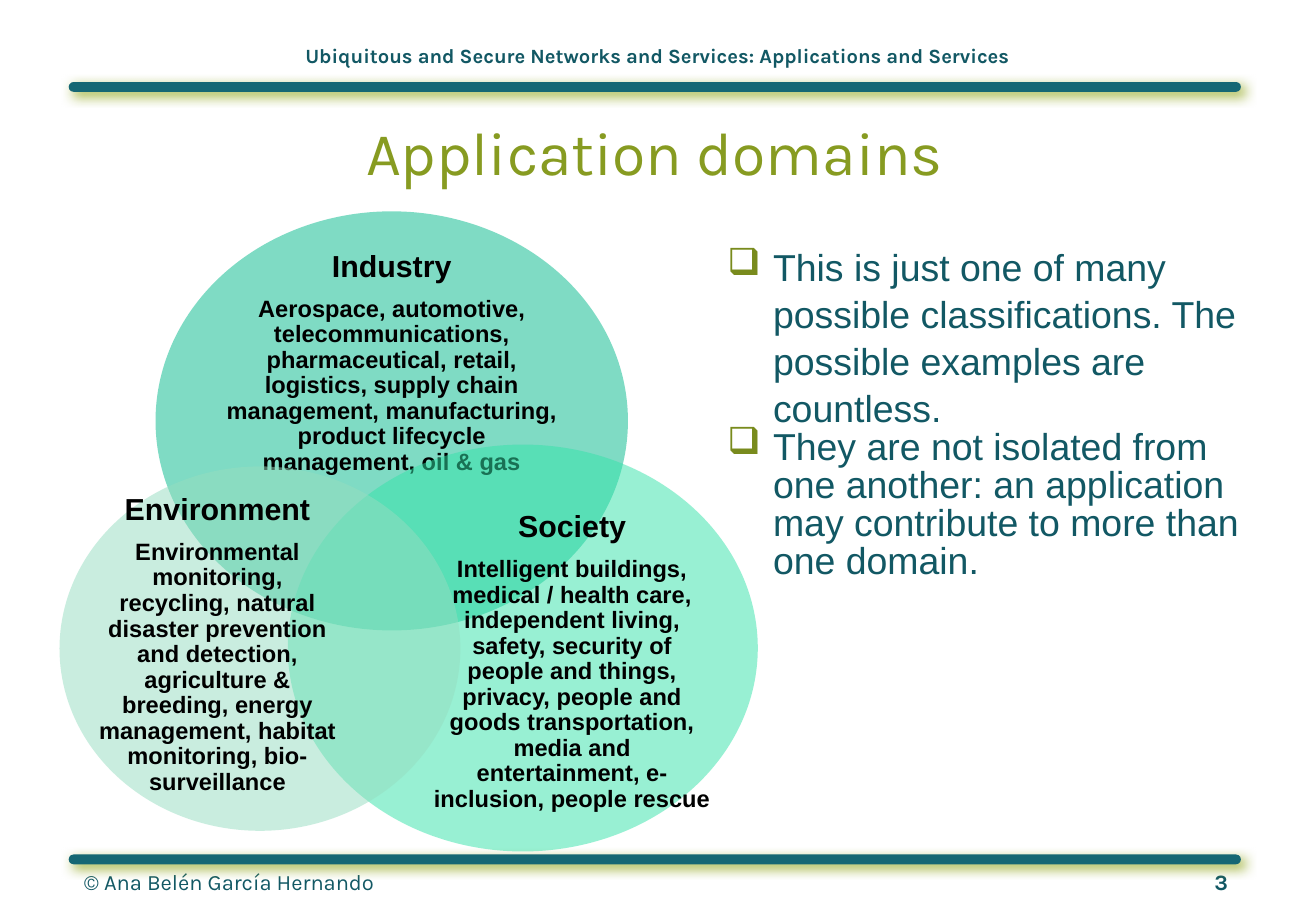
import dataclasses

import lxml.etree
import pptx
import pptx.dml.color
import pptx.enum.shapes
import pptx.enum.text
import pptx.oxml.ns
import pptx.util

Pt = pptx.util.Pt
qn = pptx.oxml.ns.qn
ALIGN = pptx.enum.text.PP_ALIGN
ANCHOR = pptx.enum.text.MSO_ANCHOR
SHAPE = pptx.enum.shapes.MSO_SHAPE


@dataclasses.dataclass(frozen=True)
class Theme:
    display: str = "Karla"
    body: str = "Arial"
    ink: str = "125864"
    title: str = "879B21"
    bar: str = "156774"
    glow: str = "95AA24"
    bullet: str = "798B1D"
    label: str = "000000"
    industry: str = "00B98B"
    society: str = "33E3A9"
    environment: str = "95DDC0"
    title_size: float = 36
    body_size: float = 22.2
    domain_size: float = 18
    detail_size: float = 14
    footer_size: float = 13
    header_size: float = 12


def rgb(value):
    return pptx.dml.color.RGBColor.from_string(value)


def add(parent, tag, **attrs):
    child = lxml.etree.SubElement(parent, qn(tag))
    for name, value in attrs.items():
        child.set(name, str(value))
    return child


class Deck:
    def __init__(self, theme):
        self.theme = theme
        self.prs = pptx.Presentation()
        self.prs.slide_width, self.prs.slide_height = Pt(780), Pt(540)
        self.s = self.prs.slides.add_slide(self.prs.slide_layouts[6])

    def shape(self, kind, box, color):
        sp = self.s.shapes.add_shape(kind, *map(Pt, box))
        sp.shadow.inherit = False
        sp.fill.solid()
        sp.fill.fore_color.rgb = rgb(color)
        sp.line.fill.background()
        return sp

    def bar(self, top):
        sp = self.shape(SHAPE.ROUNDED_RECTANGLE, (40.7, top, 694.8, 5.8), self.theme.bar)
        sp.adjustments[0] = 0.5
        effects = sp._element.spPr.find(qn("a:effectLst"))
        shadow = add(effects, "a:outerShdw", blurRad=Pt(7), dist=Pt(3), dir=45 * 60000,
                     algn="tl", rotWithShape=0)
        color = add(shadow, "a:srgbClr", val=self.theme.glow)
        add(color, "a:alpha", val=90000)

    def text_frame(self, box, inset=(0, 0), anchor=ANCHOR.TOP):
        tf = self.s.shapes.add_textbox(*map(Pt, box)).text_frame
        tf.word_wrap = True
        tf.vertical_anchor = anchor
        tf.margin_left = tf.margin_right = Pt(inset[0])
        tf.margin_top = tf.margin_bottom = Pt(inset[1])
        return tf

    def style(self, p, name, size, color, bold=None):
        p.font.name, p.font.size, p.font.bold = name, Pt(size), bold
        p.font.color.rgb = rgb(color)

    def heading(self, text, box, size, color, anchor, bold=None):
        p = self.text_frame(box, anchor=anchor).paragraphs[0]
        p.text, p.alignment = text, ALIGN.CENTER
        self.style(p, self.theme.display, size, color, bold)

    def domain(self, name, detail, color, ellipse, box):
        sp = self.shape(SHAPE.OVAL, ellipse, color)
        fill = sp._element.spPr.find(qn("a:solidFill"))
        add(fill[0], "a:alpha", val=50000)
        tf = self.text_frame(box, anchor=ANCHOR.MIDDLE)
        tf.text = f"{name}\n{detail}"
        for p, size in zip(tf.paragraphs, (self.theme.domain_size, self.theme.detail_size)):
            p.alignment, p.line_spacing = ALIGN.CENTER, 0.9
            self.style(p, self.theme.body, size, self.theme.label, True)
        tf.paragraphs[0].space_after = Pt(7.5)

    def bullets(self, items, box):
        tf = self.text_frame(box, (7.2, 3.6))
        tf.text = "\n".join(text for text, _ in items)
        for p, (_, spacing) in zip(tf.paragraphs, items):
            p.line_spacing = spacing
            pPr = p._p.get_or_add_pPr()
            pPr.set("marL", str(Pt(27)))
            pPr.set("indent", str(-Pt(27)))
            add(add(pPr, "a:buClr"), "a:srgbClr", val=self.theme.bullet)
            add(pPr, "a:buChar", char="❑")
            self.style(p, self.theme.body, self.theme.body_size, self.theme.ink)

    def footer(self, author, number, box):
        p = self.text_frame(box, (5.8, 2.9)).paragraphs[0]
        tabs = add(p._p.get_or_add_pPr(), "a:tabLst")
        add(tabs, "a:tab", pos=Pt(678.2), algn="r")
        p.add_run().text = author + "\t"
        r = p.add_run()
        r.text, r.font.bold = number, True
        self.style(p, self.theme.display, self.theme.footer_size, self.theme.ink)


def main():
    theme = Theme()
    deck = Deck(theme)
    deck.footer("© Ana Belén García Hernando", "3", (43.9, 511.9, 691.2, 21.6))
    deck.heading("Ubiquitous and Secure Networks and Services: Applications and Services",
                 (118, 25.9, 543.6, 14.4), theme.header_size, theme.ink, ANCHOR.BOTTOM, True)
    for top in (48.6, 506.5):
        deck.bar(top)
    deck.heading("Application domains", (37.4, 61.2, 701.3, 56.9),
                 theme.title_size, theme.title, ANCHOR.MIDDLE)
    deck.domain("Industry",
                "Aerospace, automotive, telecommunications, pharmaceutical, retail, logistics, "
                "supply chain management, manufacturing, product lifecycle management, oil & gas",
                theme.industry, (92.2, 125.3, 280, 248.4), (129.6, 159.5, 205.2, 111.6))
    deck.domain("Society",
                "Intelligent buildings, medical / health care, independent living, safety, "
                "security of people and things, privacy, people and goods transportation, "
                "media and entertainment, e-inclusion, people rescue",
                theme.society, (170.6, 263.5, 278.6, 241.2), (255.6, 326.2, 167, 132.5))
    deck.domain("Environment",
                "Environmental monitoring, recycling, natural disaster prevention and detection, "
                "agriculture & breeding, energy management, habitat monitoring, bio-surveillance",
                theme.environment, (35.3, 276.5, 237.6, 216), (57.6, 322.9, 142.6, 118.8))
    deck.bullets([
        ("This is just one of many possible classifications. "
         "The possible examples are countless.", 1.05),
        ("They are not isolated from one another: "
         "an application may contribute to more than one domain.", 0.84),
    ], (424.1, 139.7, 334.8, 181.4))
    deck.prs.save("out.pptx")


if __name__ == "__main__":
    main()
